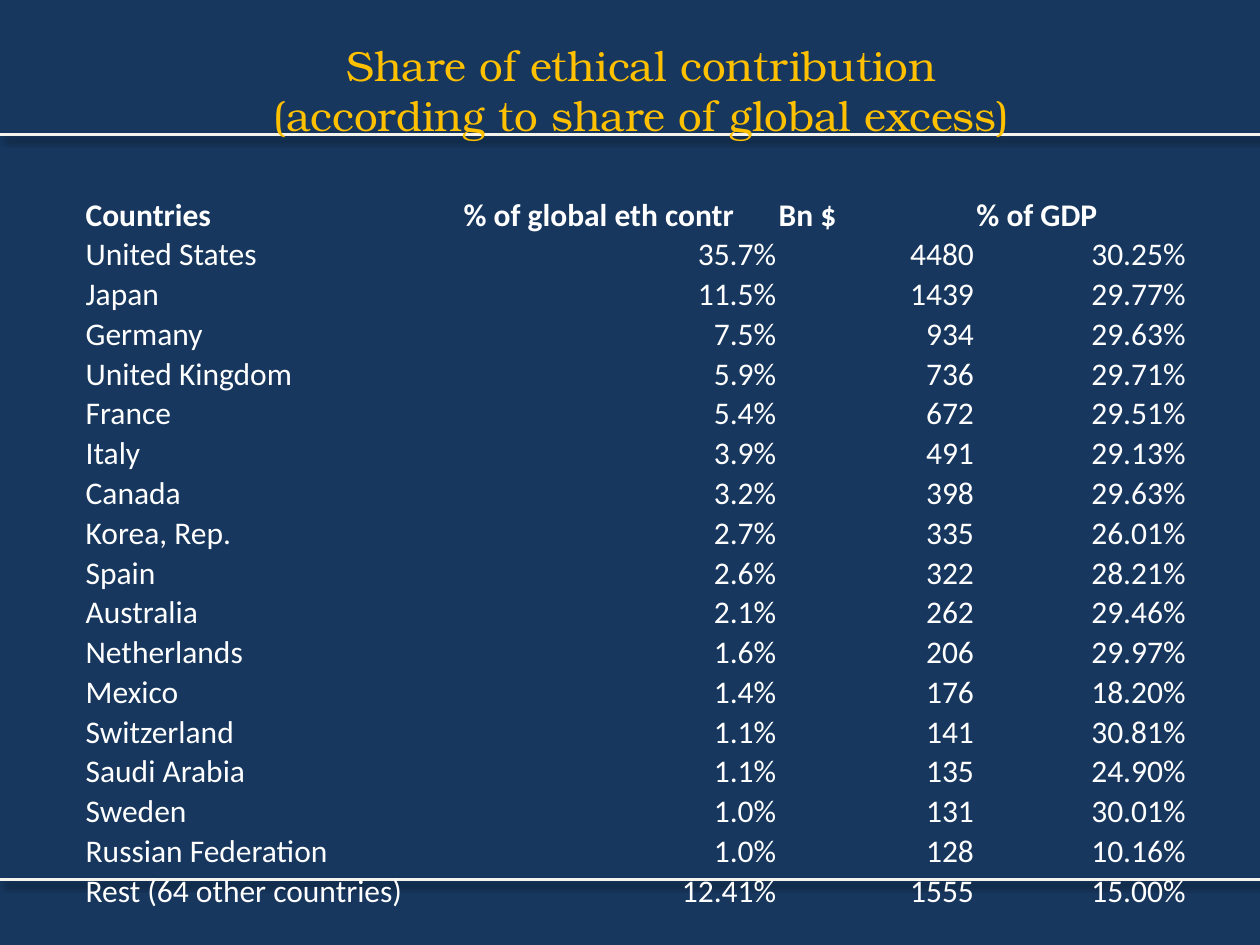
import pptx
import pptx.util
import pptx.dml.color
import pptx.enum.shapes
import pptx.enum.text
import pptx.oxml
import pptx.oxml.ns
from dataclasses import dataclass

Inches, Pt = pptx.util.Inches, pptx.util.Pt
ALIGN, ANCHOR = pptx.enum.text.PP_ALIGN, pptx.enum.text.MSO_ANCHOR
WIDTH, HEIGHT = 10, 7.5


@dataclass(frozen=True)
class Theme:
    background: str = "17375E"
    rule: str = "F5F4ED"
    title: str = "FFC000"
    body: str = "FFFFFF"
    title_font: str = "TeX Gyre Bonum"
    body_font: str = "Calibri"
    title_size: float = 24
    body_size: float = 18
    rule_width: float = 1.75


THEME = Theme()
PLAIN_TABLE = "{2D5ABB26-0587-4C30-8999-92F81FD0307C}"  # no style, no grid
SHADOW = (
    f'<a:effectLst {pptx.oxml.ns.nsdecls("a")}>'
    f'<a:outerShdw blurRad="{Pt(4)}" dist="{Pt(4)}" dir="{40 * 60000}" rotWithShape="0">'
    '<a:srgbClr val="000000"><a:alpha val="40000"/></a:srgbClr>'
    "</a:outerShdw></a:effectLst>"
)

TITLE = "Share of ethical contribution\n(according to share of global excess)"
COLUMNS = (3, 2.5, 1.57, 1.68)
HEADER_HEIGHT, ROW_HEIGHT = Pt(22.25), Pt(22.75)  # room for one 18 pt line
ROWS = [
    ("Countries", "% of global eth contr", "Bn $", "% of GDP"),
    ("United States", "35.7%", "4480", "30.25%"),
    ("Japan", "11.5%", "1439", "29.77%"),
    ("Germany", "7.5%", "934", "29.63%"),
    ("United Kingdom", "5.9%", "736", "29.71%"),
    ("France", "5.4%", "672", "29.51%"),
    ("Italy", "3.9%", "491", "29.13%"),
    ("Canada", "3.2%", "398", "29.63%"),
    ("Korea, Rep.", "2.7%", "335", "26.01%"),
    ("Spain", "2.6%", "322", "28.21%"),
    ("Australia", "2.1%", "262", "29.46%"),
    ("Netherlands", "1.6%", "206", "29.97%"),
    ("Mexico", "1.4%", "176", "18.20%"),
    ("Switzerland", "1.1%", "141", "30.81%"),
    ("Saudi Arabia", "1.1%", "135", "24.90%"),
    ("Sweden", "1.0%", "131", "30.01%"),
    ("Russian Federation", "1.0%", "128", "10.16%"),
    ("Rest (64 other countries)", "12.41%", "1555", "15.00%"),
]


def rgb(value):
    return pptx.dml.color.RGBColor.from_string(value)


def write(tf, text, *, font=THEME.body_font, size=THEME.body_size,
          color=THEME.body, bold=False, align=ALIGN.LEFT):
    """Fill the first paragraph, with a line break at each newline."""
    p = tf.paragraphs[0]
    p.alignment = align
    for i, line in enumerate(text.split("\n")):
        if i:
            p.add_line_break()
        r = p.add_run()
        r.text = line
        r.font.name, r.font.size, r.font.bold = font, Pt(size), bold
        r.font.color.rgb = rgb(color)


def add_rule(s, share):
    """Shadowed line across the slide at a share of its height."""
    y = Inches(HEIGHT * share)
    line = s.shapes.add_connector(
        pptx.enum.shapes.MSO_CONNECTOR.STRAIGHT, 0, y, Inches(WIDTH), y)
    line.line.color.rgb = rgb(THEME.rule)
    line.line.width = Pt(THEME.rule_width)
    line._element.spPr.append(pptx.oxml.parse_xml(SHADOW))


def add_title(s, text):
    box = s.shapes.add_textbox(Inches(0.59), Inches(0.28), Inches(9), Inches(0.86))
    tf = box.text_frame
    tf.word_wrap = True
    tf.vertical_anchor = ANCHOR.MIDDLE
    write(tf, text, font=THEME.title_font, size=THEME.title_size,
          color=THEME.title, align=ALIGN.CENTER)


def add_table(s, rows):
    height = HEADER_HEIGHT + ROW_HEIGHT * (len(rows) - 1)
    frame = s.shapes.add_table(len(rows), len(COLUMNS), Inches(0.67), Inches(1.55),
                               Inches(sum(COLUMNS)), height)
    table = frame.table
    table.first_row = table.horz_banding = False
    table._tbl.tblPr.find(pptx.oxml.ns.qn("a:tableStyleId")).text = PLAIN_TABLE
    for column, width in zip(table.columns, COLUMNS):
        column.width = Inches(width)
    for i, values in enumerate(rows):
        header = i == 0
        table.rows[i].height = HEADER_HEIGHT if header else ROW_HEIGHT
        for j, value in enumerate(values):
            cell = table.cell(i, j)
            cell.fill.background()
            cell.vertical_anchor = ANCHOR.BOTTOM
            cell.margin_left = cell.margin_right = cell.margin_top = Inches(0.01)
            cell.margin_bottom = 0
            write(cell.text_frame, value, bold=header,
                  align=ALIGN.LEFT if header or j == 0 else ALIGN.RIGHT)


def main():
    prs = pptx.Presentation()
    prs.slide_width, prs.slide_height = Inches(WIDTH), Inches(HEIGHT)
    s = prs.slides.add_slide(prs.slide_layouts[6])

    # Background and the two rules
    s.background.fill.solid()
    s.background.fill.fore_color.rgb = rgb(THEME.background)
    for y in (6.98, 1.07):
        add_rule(s, y / HEIGHT)

    # Title and country table
    add_title(s, TITLE)
    add_table(s, ROWS)
    prs.save("out.pptx")


if __name__ == "__main__":
    main()
